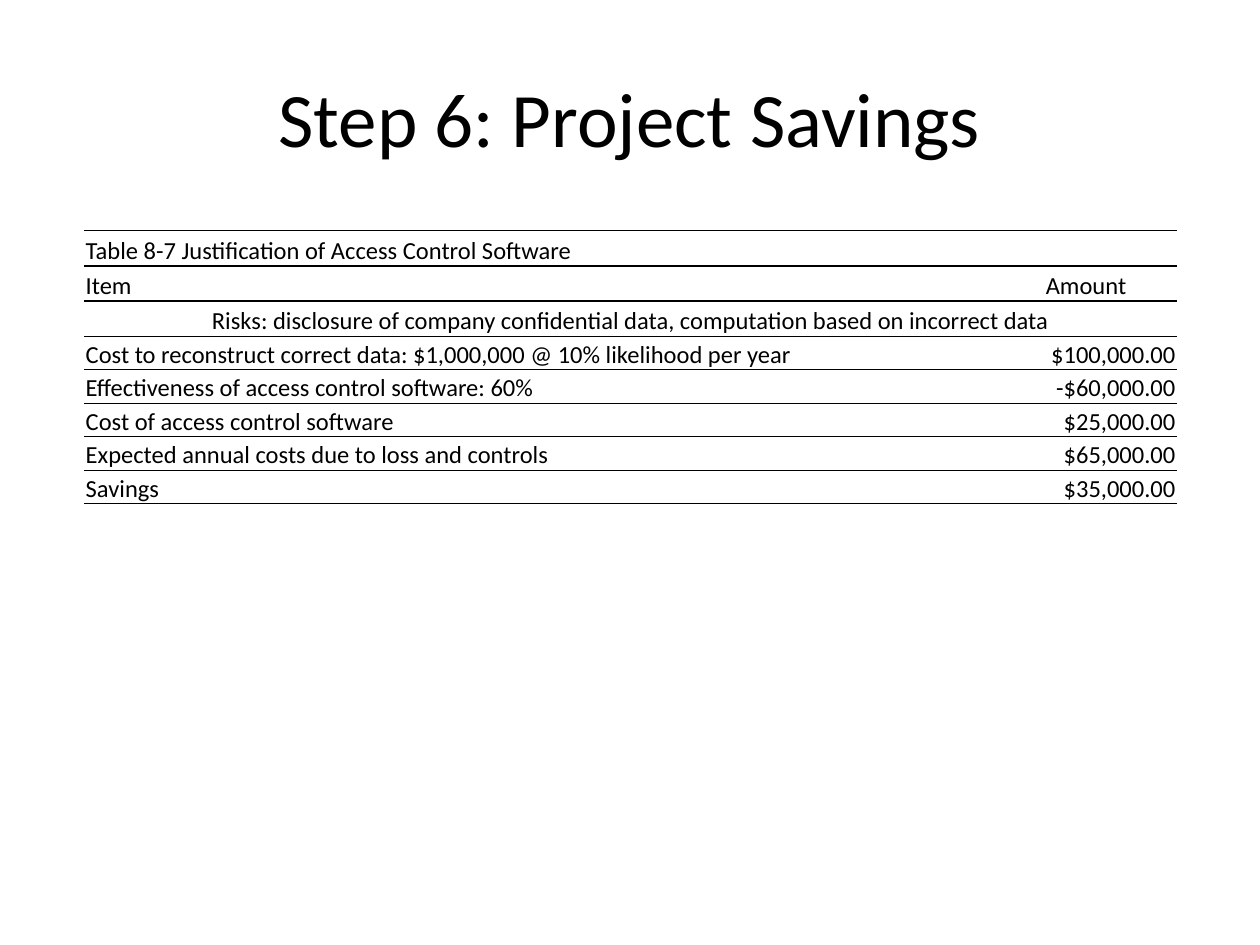
from lxml import etree
from pptx import Presentation
from pptx.dml.color import RGBColor
from pptx.enum.text import MSO_ANCHOR, PP_ALIGN
from pptx.oxml.ns import qn
from pptx.util import Inches, Pt

LEFT, CENTER, RIGHT = PP_ALIGN.LEFT, PP_ALIGN.CENTER, PP_ALIGN.RIGHT
MIDDLE, BOTTOM = MSO_ANCHOR.MIDDLE, MSO_ANCHOR.BOTTOM
COLORS = {"ink": "000000"}
FONT = "Calibri"
BODY_SIZE = 14
THIN, THICK = 0.5, 1
HEADINGS = [
    ("Table 8-7 Justification of Access Control Software", ""),
    ("Item", "Amount"),
    ("Risks: disclosure of company confidential data, computation based on incorrect data", ""),
]
COSTS = [
    ("Cost to reconstruct correct data: $1,000,000 @ 10% likelihood per year", "$100,000.00"),
    ("Effectiveness of access control software: 60%", "-$60,000.00"),
    ("Cost of access control software", "$25,000.00"),
    ("Expected annual costs due to loss and controls", "$65,000.00"),
    ("Savings", "$35,000.00"),
]


def write(frame, text, size, align):
    """Write one styled run, or size the empty paragraph, in a text frame."""
    paragraph = frame.paragraphs[0]
    paragraph.alignment = align
    if not text:
        paragraph._p.get_or_add_endParaRPr().set("sz", str(size * 100))
        return
    run = paragraph.add_run()
    run.text = text
    run.font.name = FONT
    run.font.size = Pt(size)
    run.font.color.rgb = RGBColor.from_string(COLORS["ink"])


def rule_cell(cell, top, bottom):
    """Draw the horizontal rules of a cell and hide its vertical ones."""
    properties = cell._tc.get_or_add_tcPr()
    for side, width in (("L", 0), ("R", 0), ("T", top), ("B", bottom)):
        line = etree.SubElement(properties, qn(f"a:ln{side}"), w=str(Pt(width)))
        if width:
            fill = etree.SubElement(line, qn("a:solidFill"))
            etree.SubElement(fill, qn("a:srgbClr"), val=COLORS["ink"])
        else:
            etree.SubElement(line, qn("a:noFill"))


def add_title(slide, left, top, width, height):
    """Add the centred slide title."""
    frame = slide.shapes.add_textbox(left, top, width, height).text_frame
    frame.word_wrap = True
    frame.vertical_anchor = MIDDLE
    write(frame, "Step 6: Project Savings", 44, CENTER)


def add_savings_table(slide, left, top, width, height):
    """Add the cost table with its heading rows and ruled amounts."""
    entries = HEADINGS + COSTS
    table = slide.shapes.add_table(len(entries), 2, left, top, width, height).table
    table.first_row = table.horz_banding = False
    amount_width = Inches(1.05)
    table.columns[0].width = width - amount_width
    table.columns[1].width = amount_width
    heading_height = Inches(0.28)
    cost_height = (height - heading_height * len(HEADINGS)) // len(COSTS)
    rules = [THIN] + [THICK] * len(HEADINGS) + [THIN] * len(COSTS)
    risks_row = len(HEADINGS) - 1

    for row, texts in enumerate(entries):
        is_cost = row >= len(HEADINGS)
        table.rows[row].height = cost_height if is_cost else heading_height
        aligns = (CENTER if row == risks_row else LEFT, RIGHT if is_cost else LEFT)
        for column, (text, align) in enumerate(zip(texts, aligns)):
            cell = table.cell(row, column)
            cell.margin_left = cell.margin_right = cell.margin_top = Inches(0.01)
            cell.margin_bottom = 0
            cell.vertical_anchor = BOTTOM
            rule_cell(cell, rules[row], rules[row + 1])
            cell.fill.background()
            write(cell.text_frame, text, BODY_SIZE, align)
    table.cell(risks_row, 0).merge(table.cell(risks_row, 1))


def main():
    """Build the project savings slide."""
    deck = Presentation()
    deck.slide_width, deck.slide_height = Inches(10), Inches(7.5)
    slide = deck.slides.add_slide(deck.slide_layouts[6])
    add_title(slide, Inches(0.5), Inches(0.3), Inches(9), Inches(1.25))
    add_savings_table(slide, Inches(0.67), Inches(1.83), Inches(8.67), Inches(2.17))
    deck.save("out.pptx")


if __name__ == "__main__":
    main()
